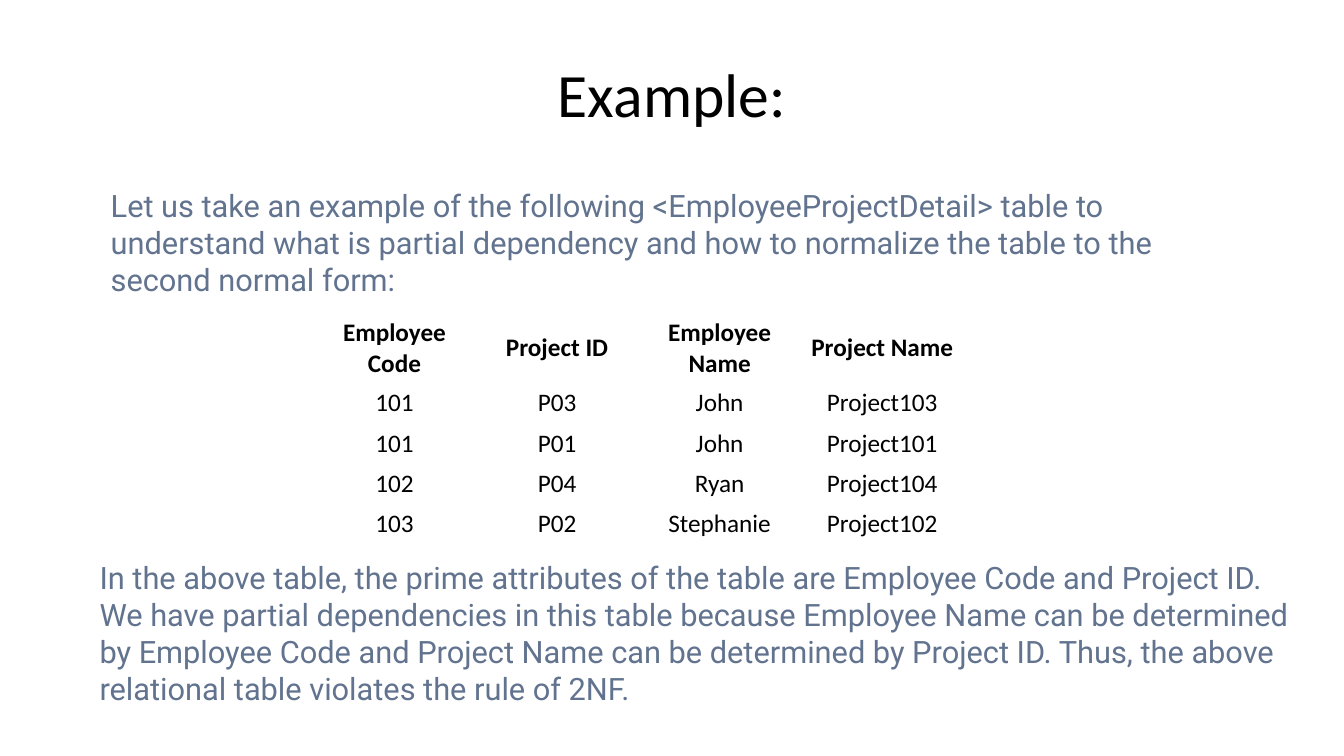
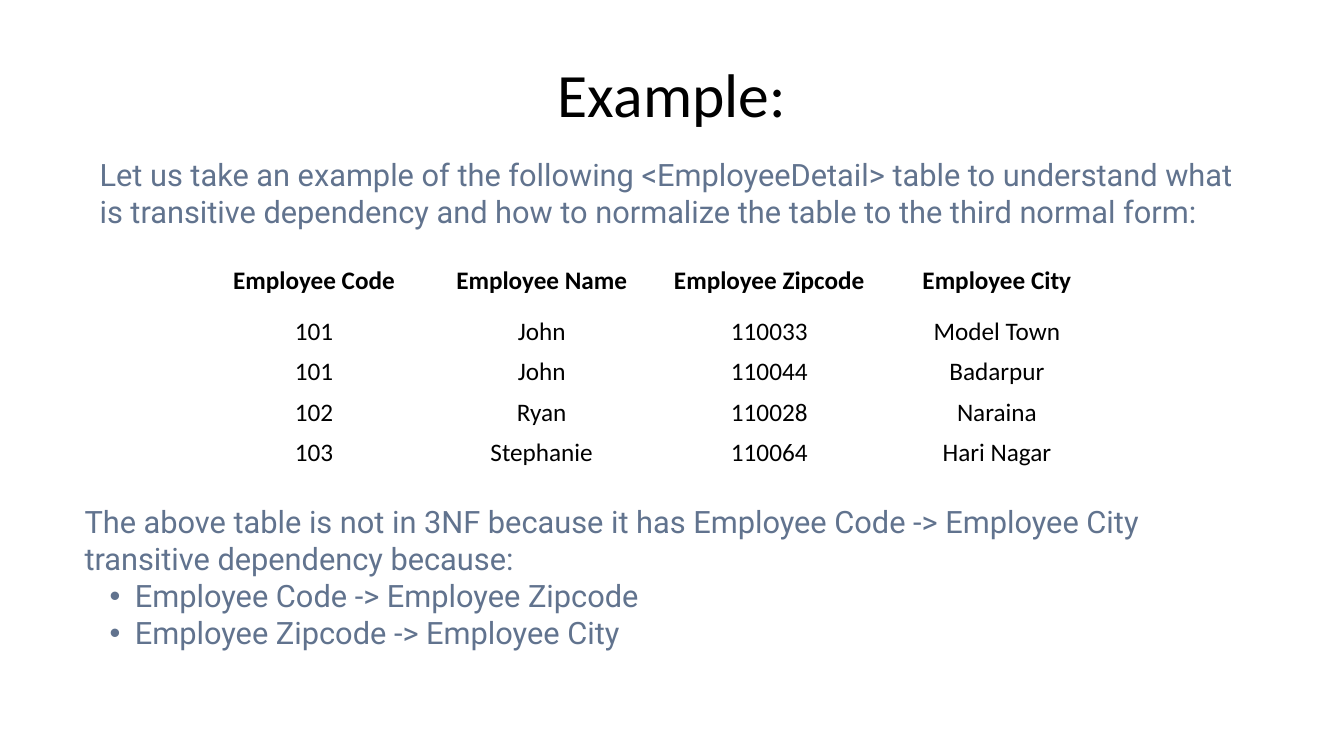
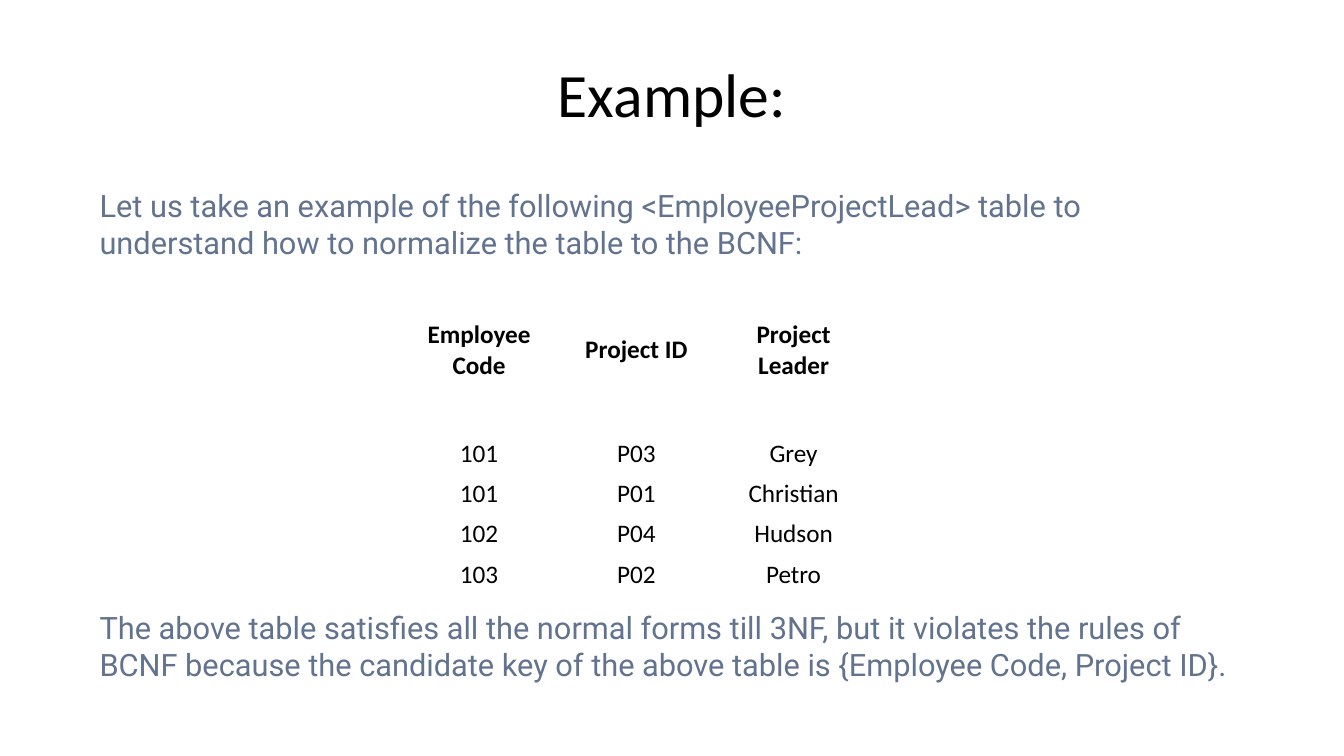
from lxml import etree
from pptx import Presentation
from pptx import util as u
from pptx.dml.color import RGBColor
from pptx.enum import text
from pptx.oxml.ns import qn

BLACK = RGBColor(0x00, 0x00, 0x00)
SLATE = RGBColor(0x61, 0x73, 0x8E)
TITLE_FONT, BODY_FONT = "Calibri", "Roboto"

prs = Presentation()
prs.slide_width, prs.slide_height = u.Inches(13.33), u.Inches(7.5)
# Lengths are given in hundredths of the slide's width and height
COL, ROW = prs.slide_width / 100, prs.slide_height / 100
BODY_ROW = 5.33

layout = prs.slide_layouts.get_by_name("Title Only")
title = layout.placeholders[0]
title.left, title.top = int(5 * COL), int(4 * ROW)
title.width, title.height = int(90 * COL), int(16.67 * ROW)

# Boxes are left, top, width, height; tables are left, top, width, header height
SLIDES = [
    dict(
        intro=("Let us take an example of the following <EmployeeProjectDetail> table to "
               "understand what is partial dependency and how to normalize the table to the "
               "second normal form:"),
        intro_box=(7.5, 24.1, 86.7, 11.2),
        rows=[("Employee Code", "Project ID", "Employee Name", "Project Name"),
              ("101", "P03", "John", "Project103"),
              ("101", "P01", "John", "Project101"),
              ("102", "P04", "Ryan", "Project104"),
              ("103", "P02", "Stephanie", "Project102")],
        table_box=(23.3, 41.3, 48.4, 9.33),
        closing=("In the above table, the prime attributes of the table are Employee Code and "
                 "Project ID. We have partial dependencies in this table because Employee Name "
                 "can be determined by Employee Code and Project Name can be determined by "
                 "Project ID. Thus, the above relational table violates the rule of 2NF."),
        closing_box=(6.67, 73.3, 90, 21.07),
        bullets=[]),
    dict(
        intro=("Let us take an example of the following <EmployeeDetail> table to understand "
               "what is transitive dependency and how to normalize the table to the third "
               "normal form:"),
        intro_box=(6.67, 19.9, 88, 11.2),
        rows=[("Employee Code", "Employee Name", "Employee Zipcode", "Employee City"),
              ("101", "John", "110033", "Model Town"),
              ("101", "John", "110044", "Badarpur"),
              ("102", "Ryan", "110028", "Naraina"),
              ("103", "Stephanie", "110064", "Hari Nagar")],
        table_box=(14.9, 33.2, 67.75, 8),
        closing=("The above table is not in 3NF because it has Employee Code -> Employee City "
                 "transitive dependency because:"),
        closing_box=(5.55, 65.9, 88, 21.07),
        bullets=["Employee Code -> Employee Zipcode", "Employee Zipcode -> Employee City"]),
    dict(
        intro=("Let us take an example of the following <EmployeeProjectLead> table to "
               "understand how to normalize the table to the BCNF:"),
        intro_box=(6.67, 24, 83.9, 11.2),
        rows=[("Employee Code", "Project ID", "Project Leader"),
              ("101", "P03", "Grey"),
              ("101", "P01", "Christian"),
              ("102", "P04", "Hudson"),
              ("103", "P02", "Petro")],
        table_box=(29.8, 35.3, 35.1, 22),
        closing=("The above table satisfies all the normal forms till 3NF, but it violates the "
                 "rules of BCNF because the candidate key of the above table is "
                 "{Employee Code, Project ID}."),
        closing_box=(6.67, 79.9, 86.7, 11.2),
        bullets=[]),
]


def style(p, size, font, color, bold=False):
    """Format every run of a paragraph."""
    for r in p.runs:
        r.font.size, r.font.name, r.font.bold = u.Pt(size), font, bold
        r.font.color.rgb = color


def add_text(s, box, lines):
    """Add a text box; every line after the first is a bullet."""
    left, top, width, height = box
    sp = s.shapes.add_textbox(int(left * COL), int(top * ROW), int(width * COL), int(height * ROW))
    tf = sp.text_frame
    tf.word_wrap = True
    tf.auto_size = text.MSO_AUTO_SIZE.SHAPE_TO_FIT_TEXT
    tf.text = "\n".join(lines)
    for i, p in enumerate(tf.paragraphs):
        style(p, 22, BODY_FONT, SLATE)
        if i:
            p.level = 1
            pPr = p._p.get_or_add_pPr()
            pPr.set("marL", str(u.Inches(0.5)))
            pPr.set("indent", str(-u.Inches(0.25)))
            etree.SubElement(pPr, qn("a:buFont")).set("typeface", "Arial")
            etree.SubElement(pPr, qn("a:buChar")).set("char", "•")


for content in SLIDES:
    s = prs.slides.add_slide(layout)
    s.shapes.title.text_frame.text = "Example:"
    p = s.shapes.title.text_frame.paragraphs[0]
    p.alignment = text.PP_ALIGN.CENTER
    style(p, 44, TITLE_FONT, BLACK)

    add_text(s, content["intro_box"], [content["intro"]])

    rows = content["rows"]
    left, top, width, header = content["table_box"]
    height = header + BODY_ROW * (len(rows) - 1)
    table = s.shapes.add_table(len(rows), len(rows[0]), int(left * COL), int(top * ROW),
                               int(width * COL), int(height * ROW)).table
    table.first_row = table.horz_banding = False
    for i, row in enumerate(rows):
        table.rows[i].height = int((BODY_ROW if i else header) * ROW)
        for j, value in enumerate(row):
            cell = table.cell(i, j)
            cell.fill.background()
            cell.vertical_anchor = text.MSO_ANCHOR.MIDDLE
            cell.text_frame.text = value
            p = cell.text_frame.paragraphs[0]
            p.alignment = text.PP_ALIGN.CENTER
            style(p, 18, TITLE_FONT, BLACK, bold=i == 0)

    add_text(s, content["closing_box"], [content["closing"]] + content["bullets"])

prs.save("out.pptx")
